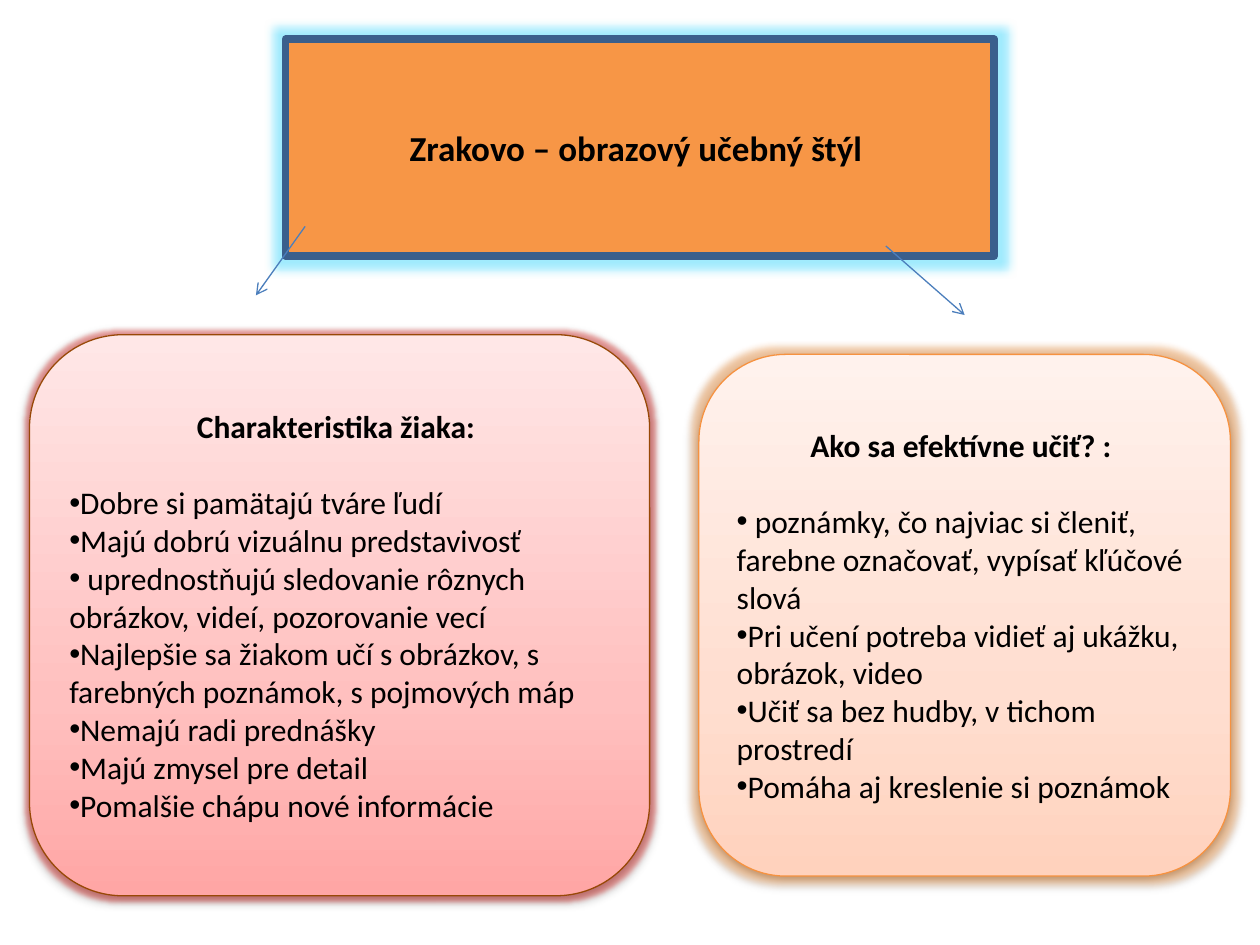
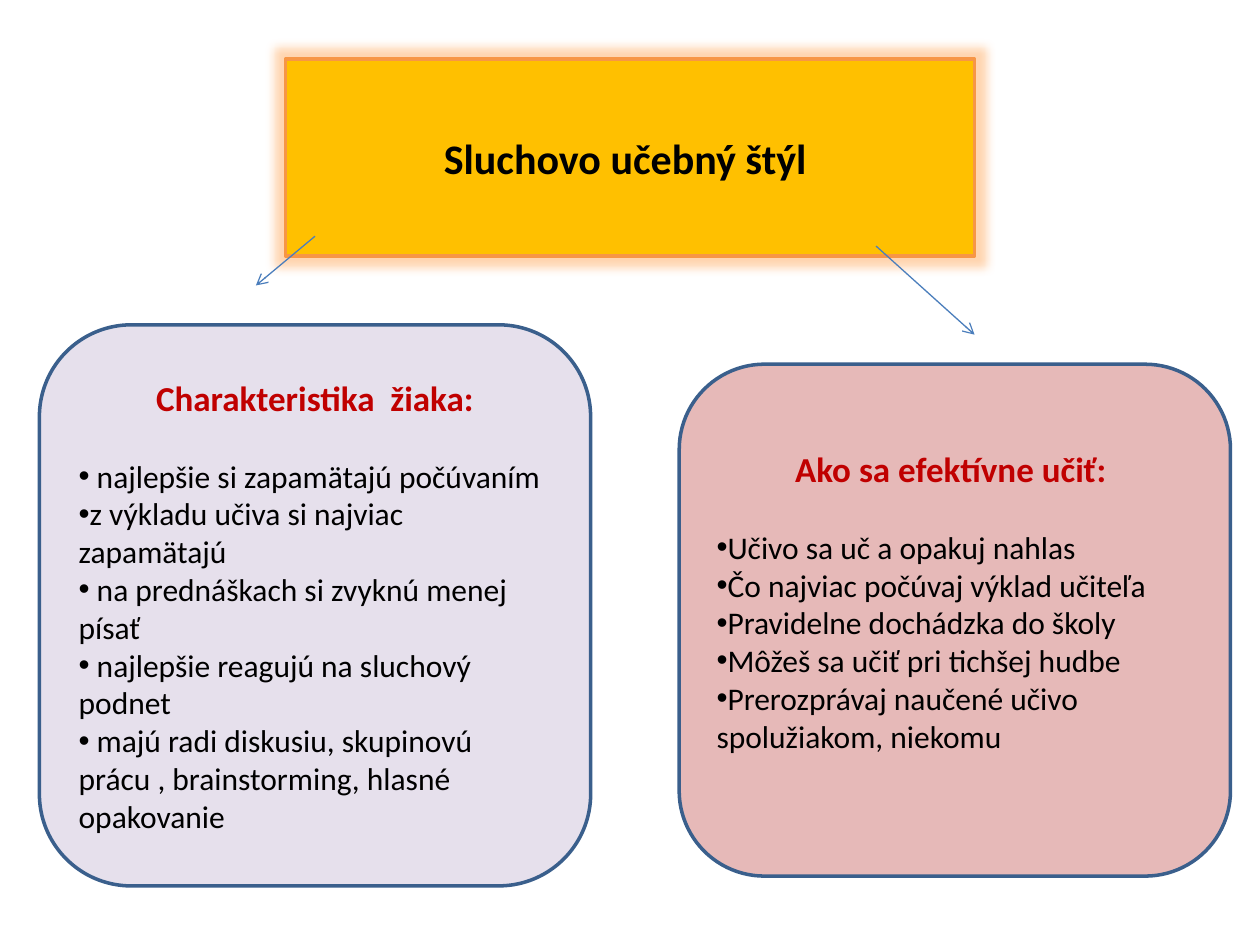
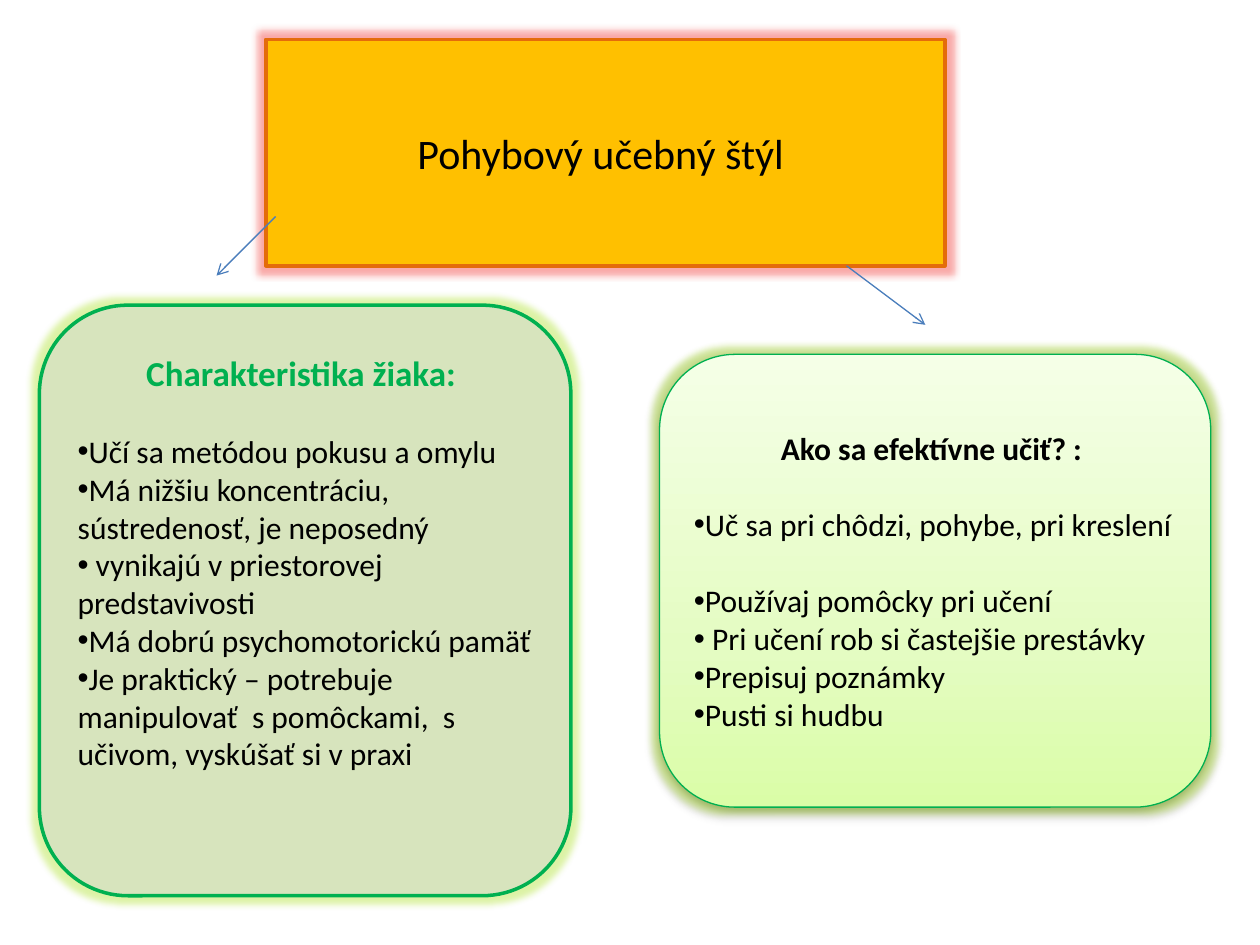
from lxml import etree
from copy import deepcopy
from pptx import Presentation
from pptx.dml.color import RGBColor
from pptx.enum.shapes import MSO_CONNECTOR, MSO_SHAPE
from pptx.enum.text import MSO_ANCHOR, MSO_AUTO_SIZE, PP_ALIGN
from pptx.oxml.ns import qn
from pptx.util import Inches, Pt

STRAIGHT = MSO_CONNECTOR.STRAIGHT
ROUNDED = MSO_SHAPE.ROUNDED_RECTANGLE
MIDDLE = MSO_ANCHOR.MIDDLE
NO_AUTOFIT = MSO_AUTO_SIZE.NONE
CENTER, LEFT = PP_ALIGN.CENTER, PP_ALIGN.LEFT

WIDTH, HEIGHT = Inches(10), Inches(7.5)
COLUMNS, ROWS = 128, 96
TITLE_ONLY = 5
FONT = "Calibri"
BLACK, NAVY, BLUE = "000000", "3A5F8C", "4B7EBC"
RED, GREEN, ORANGE, GOLD = "C00000", "00B050", "F79646", "FFC000"
BODY_SIZE = 18
BLANK_LINE = Pt(22)
INSET = Inches(0.05)
GRADIENT_POSITIONS = (0, 0.35, 1)


def color(value):
    """Turn a hex string into a colour."""
    return RGBColor.from_string(value)


def add_effect(effects, name, value, alpha, **attributes):
    """Append one effect with a transparent colour."""
    effect = etree.SubElement(effects, qn(f"a:{name}"), attributes)
    shade = etree.SubElement(effect, qn("a:srgbClr"), val=value)
    etree.SubElement(shade, qn("a:alpha"), val=str(alpha * 1000))


class LearningStyleDeck:
    """Draw the elements of the learning style slides on a fine grid."""

    def __init__(self):
        """Start an empty presentation."""
        self.presentation = Presentation()
        self.presentation.slide_width = WIDTH
        self.presentation.slide_height = HEIGHT
        self.slide = None

    def add_slide(self):
        """Start a new slide."""
        layout = self.presentation.slide_layouts[TITLE_ONLY]
        self.slide = self.presentation.slides.add_slide(layout)

    def place(self, *box):
        """Convert columns and rows, in turn, to lengths."""
        units = (WIDTH / COLUMNS, HEIGHT / ROWS)
        return [round(value * units[index % 2]) for index, value in enumerate(box)]

    def paint(self, shape, fill, outline, width, glow):
        """Set the fill, outline, glow and, for gradients, the shadow."""
        shape.shadow.inherit = False
        shape.line.color.rgb = color(outline)
        shape.line.width = Pt(width)
        properties = shape._element.spPr
        effects = properties.find(qn("a:effectLst"))
        if glow:
            value, radius = glow
            add_effect(effects, "glow", value, 40, rad=str(Pt(radius)))
        if isinstance(fill, str):
            shape.fill.solid()
            shape.fill.fore_color.rgb = color(fill)
            return
        shape.fill.gradient()
        shape.fill.gradient_angle = 90
        stop_list = properties.find(qn("a:gradFill")).find(qn("a:gsLst"))
        stop_list.append(deepcopy(stop_list[0]))
        for stop, position, value in zip(shape.fill.gradient_stops, GRADIENT_POSITIONS, fill):
            stop.position = position
            stop.color.rgb = color(value)
        add_effect(effects, "outerShdw", BLACK, 38, blurRad=str(Pt(3.1)),
                   dist=str(Pt(1.6)), dir="5400000", rotWithShape="0")

    def set_text(self, paragraph, text, size, value=BLACK, bold=False, align=LEFT):
        """Fill and format one paragraph."""
        paragraph.text = text
        paragraph.alignment = align
        for run in paragraph.runs:
            run.font.name = FONT
            run.font.size = Pt(size)
            run.font.bold = bold
            run.font.color.rgb = color(value)

    def title(self, text, box, fill, outline, width, glow, size=24, bold=True):
        """Shape the title placeholder as an ellipse."""
        shape = self.slide.shapes.title
        shape.left, shape.top, shape.width, shape.height = self.place(*box)
        geometry = etree.SubElement(shape._element.spPr, qn("a:prstGeom"), prst="ellipse")
        etree.SubElement(geometry, qn("a:avLst"))
        self.paint(shape, fill, outline, width, glow)
        frame = shape.text_frame
        frame.auto_size = NO_AUTOFIT
        frame.word_wrap = True
        frame.vertical_anchor = MIDDLE
        self.set_text(frame.paragraphs[0], text, size, bold=bold, align=CENTER)

    def card(self, heading, items, box, fill, outline, width=2, glow=None,
             heading_size=20, heading_color=BLACK, spare_lines=0, gap_after=None):
        """Add a rounded card with a heading and a bulleted list."""
        shape = self.slide.shapes.add_shape(ROUNDED, *self.place(*box))
        self.paint(shape, fill, outline, width, glow)
        frame = shape.text_frame
        frame.word_wrap = True
        frame.vertical_anchor = MIDDLE
        frame.margin_bottom = INSET + spare_lines * BLANK_LINE
        first = frame.paragraphs[0]
        self.set_text(first, heading, heading_size, heading_color, True, CENTER)
        first.space_after = BLANK_LINE
        for index, item in enumerate(items):
            paragraph = frame.add_paragraph()
            self.set_text(paragraph, item, BODY_SIZE)
            if index == gap_after:
                paragraph.space_after = BLANK_LINE
            properties = paragraph._p.get_or_add_pPr()
            etree.SubElement(properties, qn("a:buFont"), typeface="Arial")
            etree.SubElement(properties, qn("a:buChar"), char="•")

    def arrow(self, *ends):
        """Add a thin arrow from the title to a card."""
        connector = self.slide.shapes.add_connector(STRAIGHT, *self.place(*ends))
        connector.line.color.rgb = color(BLUE)
        connector.line.width = Pt(0.75)
        properties = connector._element.spPr
        etree.SubElement(properties.find(qn("a:ln")), qn("a:tailEnd"), type="arrow")
        etree.SubElement(properties, qn("a:effectLst"))


def add_visual_style(deck):
    """Build the slide on the visual learning style."""
    deck.add_slide()
    deck.title("Zrakovo – obrazový učebný štýl ", (29, 4, 72, 22), ORANGE, NAVY, 4.5,
               ("14CDFC", 11), size=20)
    deck.card("Charakteristika žiaka: ", [
        "Dobre si pamätajú tváre ľudí",
        "Majú dobrú vizuálnu predstavivosť",
        " uprednostňujú sledovanie rôznych obrázkov, videí, pozorovanie vecí",
        "Najlepšie sa žiakom učí s obrázkov, s farebných poznámok, s pojmových máp",
        "Nemajú radi prednášky",
        "Majú zmysel pre detail",
        "Pomalšie chápu nové informácie",
    ], (3, 34, 63, 57), ("FFA6A5", "FFC0BF", "FFE7E7"), "984807", 0.75,
        ("E52A26", 5), heading_size=18)
    deck.arrow(31, 23, 26, 30)
    deck.card("Ako sa efektívne učiť? : ", [
        " poznámky, čo najviac si členiť, farebne označovať, vypísať kľúčové slová",
        "Pri učení potreba vidieť aj ukážku, obrázok, video",
        "Učiť sa bez hudby, v tichom prostredí",
        "Pomáha aj kreslenie si poznámok",
    ], (71, 36, 54, 53), ("FFD2BD", "FFDED0", "FFF2ED"), "F69240", 0.75,
        ("FF9639", 8), heading_size=18)
    deck.arrow(90, 25, 98, 32)


def add_auditory_style(deck):
    """Build the slide on the auditory learning style."""
    deck.add_slide()
    deck.title("Sluchovo učebný štýl ", (29, 6, 70, 20), GOLD, ORANGE, 2, ("FF9639", 11))
    deck.card("Charakteristika  žiaka:", [
        " najlepšie si zapamätajú počúvaním",
        "z výkladu učiva si najviac zapamätajú",
        " na prednáškach si zvyknú menej písať",
        " najlepšie reagujú na sluchový podnet",
        " majú radi diskusiu, skupinovú prácu , brainstorming, hlasné opakovanie",
    ], (4, 33, 56, 57), "E6E0EC", NAVY, heading_color=RED)
    deck.card("Ako sa efektívne učiť: ", [
        "Učivo sa uč a opakuj nahlas",
        "Čo najviac počúvaj výklad učiteľa",
        "Pravidelne dochádzka do školy",
        "Môžeš sa učiť pri tichšej hudbe",
        "Prerozprávaj naučené učivo spolužiakom, niekomu",
    ], (69, 37, 56, 52), "E6B9B8", NAVY, heading_color=RED, spare_lines=1)
    deck.arrow(32, 24, 26, 29)
    deck.arrow(89, 25, 99, 34)


def add_movement_style(deck):
    """Build the slide on the movement learning style."""
    deck.add_slide()
    deck.title("Pohybový učebný štýl ", (27, 4, 69, 23), GOLD, "E46C0A", 2,
               ("F02A26", 8), bold=False)
    deck.card("Charakteristika žiaka: ", [
        "Učí sa metódou pokusu a omylu",
        "Má nižšiu koncentráciu, sústredenosť, je neposedný",
        " vynikajú v priestorovej predstavivosti",
        "Má dobrú psychomotorickú pamäť",
        "Je praktický – potrebuje manipulovať  s pomôckami,  s učivom, vyskúšať si v praxi",
    ], (4, 31, 54, 60), "D7E4BD", GREEN, glow=("A9E020", 8),
        heading_color=GREEN, spare_lines=2)
    deck.card("Ako sa efektívne učiť? : ", [
        "Uč sa pri chôdzi, pohybe, pri kreslení",
        "Používaj pomôcky pri učení",
        " Pri učení rob si častejšie prestávky",
        "Prepisuj poznámky",
        "Pusti si hudbu",
    ], (67, 36, 56, 46), ("DAFDA7", "E4FCC2", "F5FFE7"), GREEN, 0.75,
        ("A9E020", 8), heading_size=18, gap_after=0)
    deck.arrow(28, 22, 22, 28)
    deck.arrow(86, 27, 94, 33)


def main():
    """Build and save the presentation."""
    deck = LearningStyleDeck()
    add_visual_style(deck)
    add_auditory_style(deck)
    add_movement_style(deck)
    deck.presentation.save("out.pptx")


if __name__ == "__main__":
    main()
